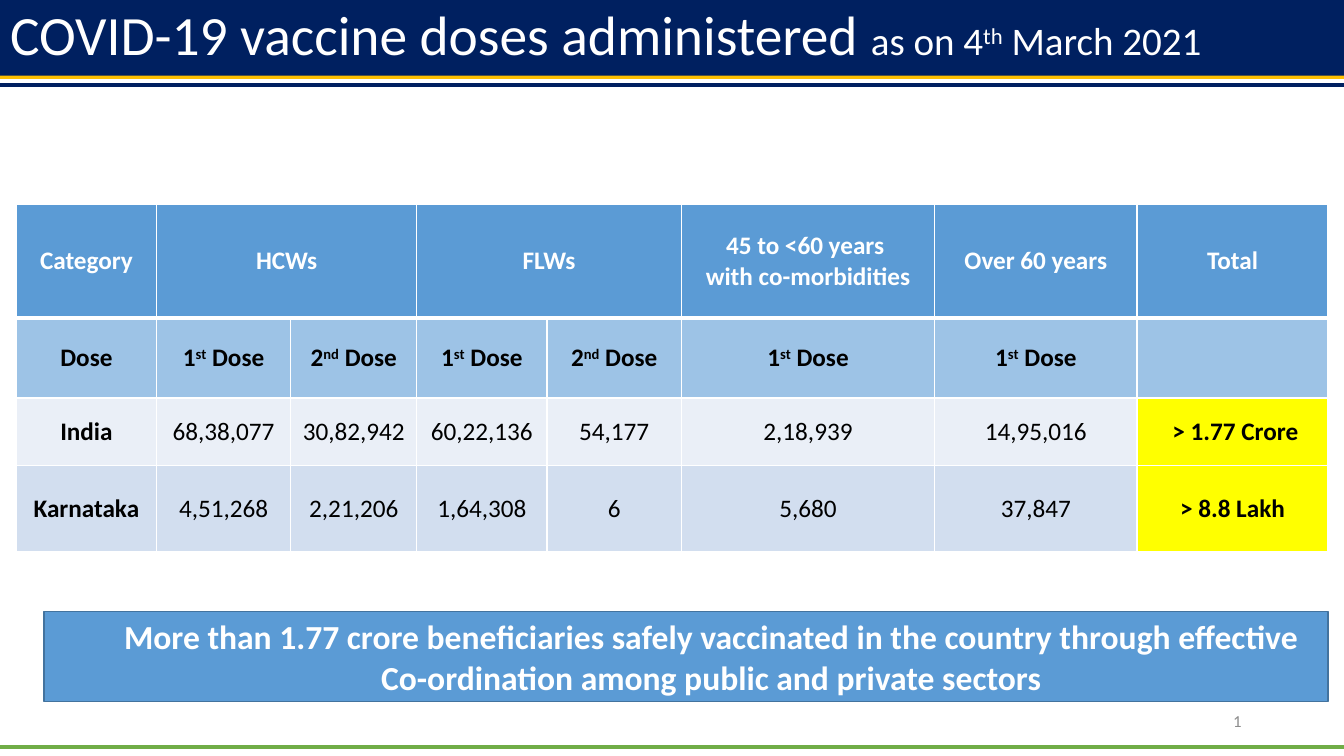
"""Build the slide on COVID-19 vaccine doses administered."""
from lxml import etree
from pptx import Presentation
from pptx.dml.color import RGBColor
from pptx.enum.shapes import MSO_CONNECTOR, MSO_SHAPE
from pptx.enum.text import MSO_ANCHOR, MSO_AUTO_SIZE, PP_ALIGN
from pptx.oxml import parse_xml
from pptx.oxml.ns import nsdecls, qn
from pptx.util import Pt

LEFT, CENTER, RIGHT = PP_ALIGN.LEFT, PP_ALIGN.CENTER, PP_ALIGN.RIGHT
MIDDLE = MSO_ANCHOR.MIDDLE
NO_AUTOFIT = MSO_AUTO_SIZE.NONE
RECTANGLE = MSO_SHAPE.RECTANGLE
STRAIGHT = MSO_CONNECTOR.STRAIGHT

WIDTH, HEIGHT = 960, 540
FONT = "Calibri"
COLORS = {
    "navy": "002060", "gold": "FFC000", "green": "70AD47", "white": "FFFFFF",
    "black": "000000", "gray": "8C8C8C", "blue": "5B9BD5", "edge": "43739E",
    "dose": "9DC3E6", "india": "EAEFF7", "karnataka": "D2DEEF", "yellow": "FFFF00",
}
RULES = [(54.72, "gold"), (60.48, "navy"), (533.52, "green")]
COLUMN_WIDTHS = [100, 96, 90, 93, 96, 181, 144.5, 136.5]
ROW_HEIGHTS = [81.5, 57, 48, 62]
ROW_FILLS = ["blue", "dose", "india", "karnataka"]
FIRST, SECOND = "1^st^ Dose", "2^nd^ Dose"
DOSES = [
    ["Category", "HCWs", "", "FLWs", "", "45 to <60 years \nwith co-morbidities",
     "Over 60 years", "Total"],
    ["Dose", FIRST, SECOND, FIRST, SECOND, FIRST, FIRST, ""],
    ["India", "68,38,077", "30,82,942", "60,22,136", "54,177", "2,18,939",
     "14,95,016", " > 1.77 Crore"],
    ["Karnataka", "4,51,268", "2,21,206", "1,64,308", "6", "5,680", "37,847",
     "> 8.8 Lakh"],
]


class SlideBuilder:
    """Hold the style and the current slide."""

    def __init__(self, slide):
        self.slide = slide
        self.shapes = slide.shapes

    def color(self, name):
        return RGBColor.from_string(COLORS[name])

    def fill(self, target, name):
        target.fill.solid()
        target.fill.fore_color.rgb = self.color(name)

    def style_font(self, font, size, color, bold=False):
        font.name = FONT
        font.size = Pt(size)
        font.bold = bold
        font.color.rgb = self.color(color)

    def add_runs(self, paragraph, text, size, color, bold=False, align=CENTER):
        """Add runs to a paragraph; text between carets is superscript."""
        paragraph.alignment = align
        for index, part in enumerate(text.split("^")):
            run = paragraph.add_run()
            run.text = part
            self.style_font(run.font, size, color, bold)
            if index % 2:
                run.font._element.set("baseline", "30000")

    def rule(self, top, color):
        line = self.shapes.add_connector(STRAIGHT, 0, Pt(top), Pt(WIDTH), Pt(top))
        line.line.color.rgb = self.color(color)
        line.line.width = Pt(3)
        etree.SubElement(line._element.spPr, qn("a:effectLst"))

    def title(self, parts):
        title = self.shapes.title
        self.shapes._spTree.append(title._element)
        title.left, title.top, title.width, title.height = 0, 0, Pt(WIDTH), Pt(54)
        self.fill(title, "navy")
        frame = title.text_frame
        frame.auto_size, frame.vertical_anchor = NO_AUTOFIT, MIDDLE
        paragraph = frame.paragraphs[0]
        paragraph.line_spacing = 0.9
        for text, size in parts:
            self.add_runs(paragraph, text, size, "white", align=LEFT)

    def slide_number(self, left, top, width, height):
        box = self.shapes.add_textbox(Pt(left), Pt(top), Pt(width), Pt(height))
        frame = box.text_frame
        frame.word_wrap, frame.vertical_anchor = True, MIDDLE
        paragraph = frame.paragraphs[0]
        paragraph.alignment = RIGHT
        paragraph._p.append(parse_xml(
            f'<a:fld {nsdecls("a")} id="{{B6F15528-21DE-4FAA-801E-634DDDAF4B2B}}" '
            f'type="slidenum"><a:rPr lang="en-US" sz="1200"><a:solidFill>'
            f'<a:srgbClr val="{COLORS["gray"]}"/></a:solidFill>'
            f'<a:latin typeface="{FONT}"/></a:rPr><a:t>2</a:t></a:fld>'))

    def borders(self, cell, bottom):
        properties = cell._tc.get_or_add_tcPr()
        for side, width in (("L", 1), ("R", 1), ("T", 1), ("B", bottom)):
            properties.append(parse_xml(
                f'<a:ln{side} {nsdecls("a")} w="{Pt(width)}"><a:solidFill>'
                f'<a:srgbClr val="{COLORS["white"]}"/></a:solidFill></a:ln{side}>'))

    def cell(self, cell, text, row, column):
        is_total = row > 1 and column == len(COLUMN_WIDTHS) - 1
        bold = row < 2 or column == 0 or is_total
        color = "black" if row else "white"
        self.borders(cell, 1 if row else 3)
        self.fill(cell, "yellow" if is_total else ROW_FILLS[row])
        cell.vertical_anchor = MIDDLE
        frame = cell.text_frame
        for index, line in enumerate(text.split("\n") if text else []):
            paragraph = frame.add_paragraph() if index else frame.paragraphs[0]
            self.add_runs(paragraph, line, 18, color, bold)

    def table(self, left, top):
        table = self.shapes.add_table(
            len(ROW_HEIGHTS), len(COLUMN_WIDTHS), Pt(left), Pt(top),
            Pt(sum(COLUMN_WIDTHS)), Pt(sum(ROW_HEIGHTS))).table
        for column, width in zip(table.columns, COLUMN_WIDTHS):
            column.width = Pt(width)
        for row, height in zip(table.rows, ROW_HEIGHTS):
            row.height = Pt(height)
        for row, texts in enumerate(DOSES):
            for column, text in enumerate(texts):
                self.cell(table.cell(row, column), text, row, column)
        for column in (1, 3):
            table.cell(0, column).merge(table.cell(0, column + 1))

    def banner(self, left, top, width, height, text):
        shape = self.shapes.add_shape(
            RECTANGLE, Pt(left), Pt(top), Pt(width), Pt(height))
        shape.shadow.inherit = False
        self.fill(shape, "blue")
        shape.line.color.rgb = self.color("edge")
        shape.line.width = Pt(1)
        frame = shape.text_frame
        frame.word_wrap, frame.vertical_anchor = True, MIDDLE
        paragraph = frame.paragraphs[0]
        paragraph.level = 1
        paragraph._p.get_or_add_pPr().set("marL", str(Pt(36)))
        self.add_runs(paragraph, text, 24, "white", bold=True)


def main():
    presentation = Presentation()
    presentation.slide_width, presentation.slide_height = Pt(WIDTH), Pt(HEIGHT)
    slide = presentation.slides.add_slide(presentation.slide_layouts[5])
    builder = SlideBuilder(slide)
    for top, color in RULES:
        builder.rule(top, color)
    builder.slide_number(678, 500.5, 216, 28.75)
    builder.title([("COVID-19 vaccine doses administered ", 39.6),
                   ("as on 4^th^ March 2021", 27.9)])
    builder.table(11.75, 145.75)
    builder.banner(31.5, 437, 917, 64,
                   "More than 1.77 crore beneficiaries safely vaccinated in the country "
                   "through effective Co-ordination among public and private sectors")
    presentation.save("out.pptx")


if __name__ == "__main__":
    main()
